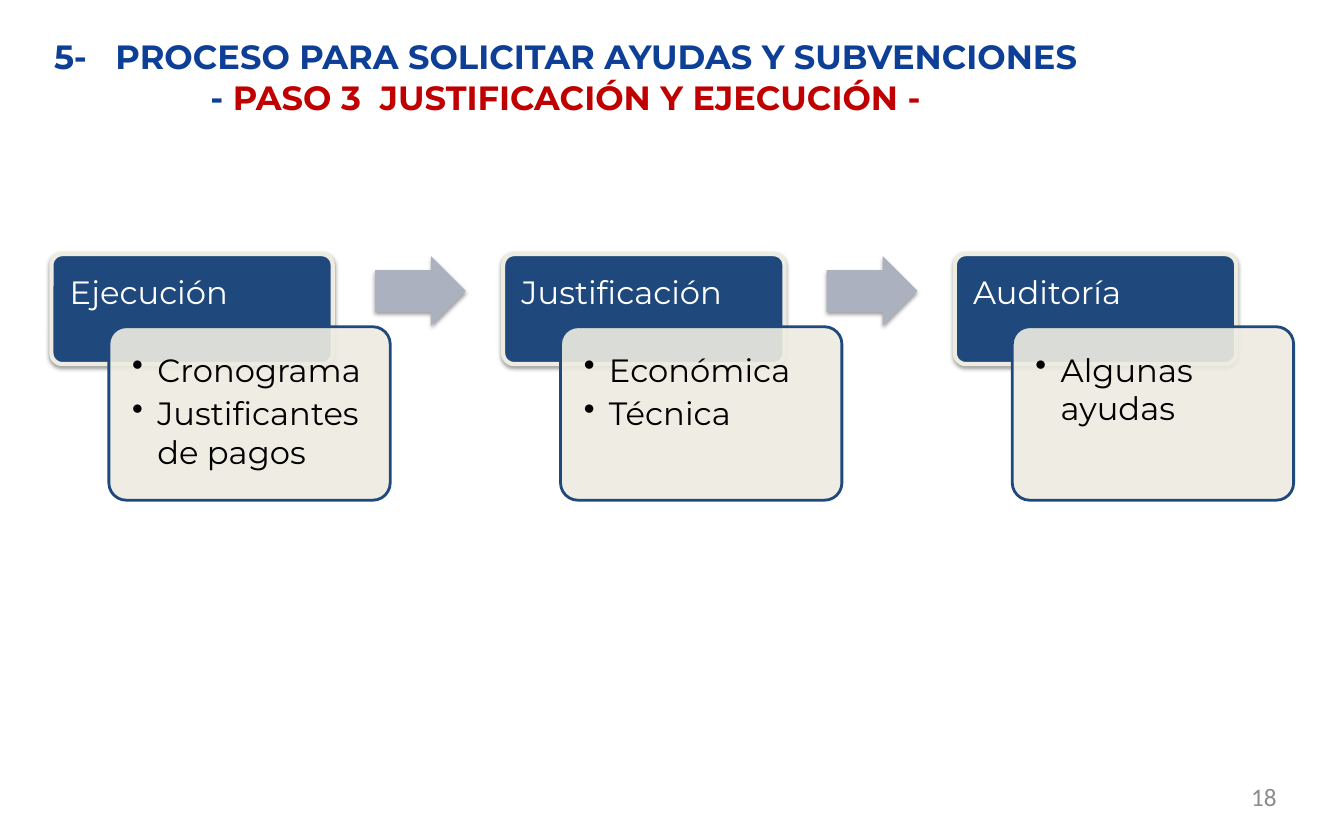
from dataclasses import dataclass

from lxml import etree
from pptx import Presentation
from pptx import util as u
from pptx.dml.color import RGBColor
from pptx.enum import shapes, text
from pptx.oxml import ns


@dataclass(frozen=True)
class Theme:
    heading_font: str = "Montserrat"
    number_font: str = "Calibri"
    title_size: int = 24
    card_size: int = 23
    number_size: int = 18
    title: str = "0D3F96"
    accent: str = "C00000"
    navy: str = "1F497D"
    cream: str = "EEECE1"
    arrow: str = "ACB1BF"
    white: str = "FFFFFF"
    black: str = "000000"
    gray: str = "8C8C8C"


THEME = Theme()
WIDTH, HEIGHT = 13.33, 8.33
STEP_LEFT, STEP_TOP, STEP_PITCH = 0.51, 2.52, 4.48
CARD_WIDTH, HEADER_HEIGHT, LIST_HEIGHT = 2.79, 1.09, 1.72
LIST_SHIFT = 0.57, 0.72
ARROW_SHIFT = 3.21, 0.02
ARROW_SIZE = 0.9, 0.69
TITLE = [
    [("5-   PROCESO PARA SOLICITAR AYUDAS Y SUBVENCIONES", THEME.title)],
    [("- ", THEME.title), ("PASO 3  JUSTIFICACIÓN Y EJECUCIÓN -", THEME.accent)],
]
STEPS = [
    ("Ejecución", ["Cronograma", "Justificantes de pagos"]),
    ("Justificación", ["Económica", "Técnica"]),
    ("Auditoría", ["Algunas ayudas"]),
]


def add_element(parent, tag, **attributes):
    element = etree.SubElement(parent, ns.qn(tag))
    for name, value in attributes.items():
        element.set(name, str(value))
    return element


def write_text(shape, paragraphs, *, size, font=THEME.heading_font, bold=False,
               align=text.PP_ALIGN.LEFT, insets=(0.1, 0.05, 0.1, 0.05),
               space_after=0, bullet=False):
    frame = shape.text_frame
    frame.word_wrap = True
    frame.auto_size = text.MSO_AUTO_SIZE.NONE
    frame.vertical_anchor = text.MSO_ANCHOR.TOP
    frame.margin_left, frame.margin_top, frame.margin_right, frame.margin_bottom = map(u.Inches, insets)
    for index, runs in enumerate(paragraphs):
        paragraph = frame.paragraphs[0] if index == 0 else frame.add_paragraph()
        paragraph.alignment = align
        paragraph.space_after = u.Pt(space_after)
        if bullet:
            properties = paragraph._p.get_or_add_pPr()
            properties.set("marL", str(u.Inches(0.25)))
            properties.set("indent", str(-u.Inches(0.25)))
            add_element(properties, "a:buChar", char="•")
        for words, color in runs:
            run = paragraph.add_run()
            run.text = words
            run.font.name = font
            run.font.size = u.Pt(size)
            run.font.bold = bold
            run.font.color.rgb = RGBColor.from_string(color)


def place(shape, left, top, width, height):
    shape.left, shape.top, shape.width, shape.height = map(u.Inches, (left, top, width, height))


def add_filled(slide, kind, box, fill, adjustments, line=None, line_width=0, opacity=None, shadow=False):
    shape = slide.shapes.add_shape(kind, *map(u.Inches, box))
    for index, value in enumerate(adjustments):
        shape.adjustments[index] = value
    shape.fill.solid()
    shape.fill.fore_color.rgb = RGBColor.from_string(fill)
    if opacity:
        color = shape._element.spPr.find(ns.qn("a:solidFill"))[0]
        add_element(color, "a:alpha", val=opacity * 1000)
    if line:
        shape.line.color.rgb = RGBColor.from_string(line)
        shape.line.width = u.Pt(line_width)
    else:
        shape.line.fill.background()
    shape.shadow.inherit = False
    if shadow:
        effects = shape._element.spPr.find(ns.qn("a:effectLst"))
        outer = add_element(effects, "a:outerShdw", blurRad=u.Pt(3.1), dist=u.Pt(1.6),
                            dir=5400000, rotWithShape=0)
        color = add_element(outer, "a:srgbClr", val=THEME.black)
        add_element(color, "a:alpha", val=38000)
    return shape


def add_title(slide, box):
    title = slide.shapes.title
    place(title, *box)
    write_text(title, TITLE, size=THEME.title_size, bold=True, align=text.PP_ALIGN.CENTER)


def add_step(slide, left, top, heading, items):
    rounded = shapes.MSO_SHAPE.ROUNDED_RECTANGLE
    header = add_filled(slide, rounded, (left, top, CARD_WIDTH, HEADER_HEIGHT), THEME.navy,
                        [0.1], line=THEME.cream, line_width=3, shadow=True)
    write_text(header, [[(heading, THEME.white)]], size=THEME.card_size,
               insets=(0.15, 0.15, 0.15, 0.1))
    box = left + LIST_SHIFT[0], top + LIST_SHIFT[1], CARD_WIDTH, LIST_HEIGHT
    card = add_filled(slide, rounded, box, THEME.cream, [0.1], line=THEME.navy,
                      line_width=2, opacity=90)
    write_text(card, [[(item, THEME.black)] for item in items], size=THEME.card_size,
               insets=(0.18,) * 4, space_after=3.45, bullet=True)


def add_process(slide, left, top):
    for index, (heading, items) in enumerate(STEPS):
        step_left = left + index * STEP_PITCH
        add_step(slide, step_left, top, heading, items)
        if index < len(STEPS) - 1:
            box = step_left + ARROW_SHIFT[0], top + ARROW_SHIFT[1], *ARROW_SIZE
            add_filled(slide, shapes.MSO_SHAPE.RIGHT_ARROW, box, THEME.arrow, [0.6, 0.5], shadow=True)


def add_page_number(slide, box):
    number = slide.shapes.add_textbox(*map(u.Inches, box))
    write_text(number, [[("18", THEME.gray)]], size=THEME.number_size, font=THEME.number_font,
               align=text.PP_ALIGN.RIGHT, insets=(0,) * 4)


def main():
    presentation = Presentation()
    presentation.slide_width = u.Inches(WIDTH)
    presentation.slide_height = u.Inches(HEIGHT)
    slide = presentation.slides.add_slide(presentation.slide_layouts.get_by_name("Title Only"))
    add_page_number(slide, (0.72 * WIDTH, 0.93 * HEIGHT, 0.23 * WIDTH, 0.05 * HEIGHT))
    add_title(slide, (0.01, 0.31, 0.84 * WIDTH, 0.11 * HEIGHT))
    add_process(slide, STEP_LEFT, STEP_TOP)
    presentation.save("out.pptx")


if __name__ == "__main__":
    main()
